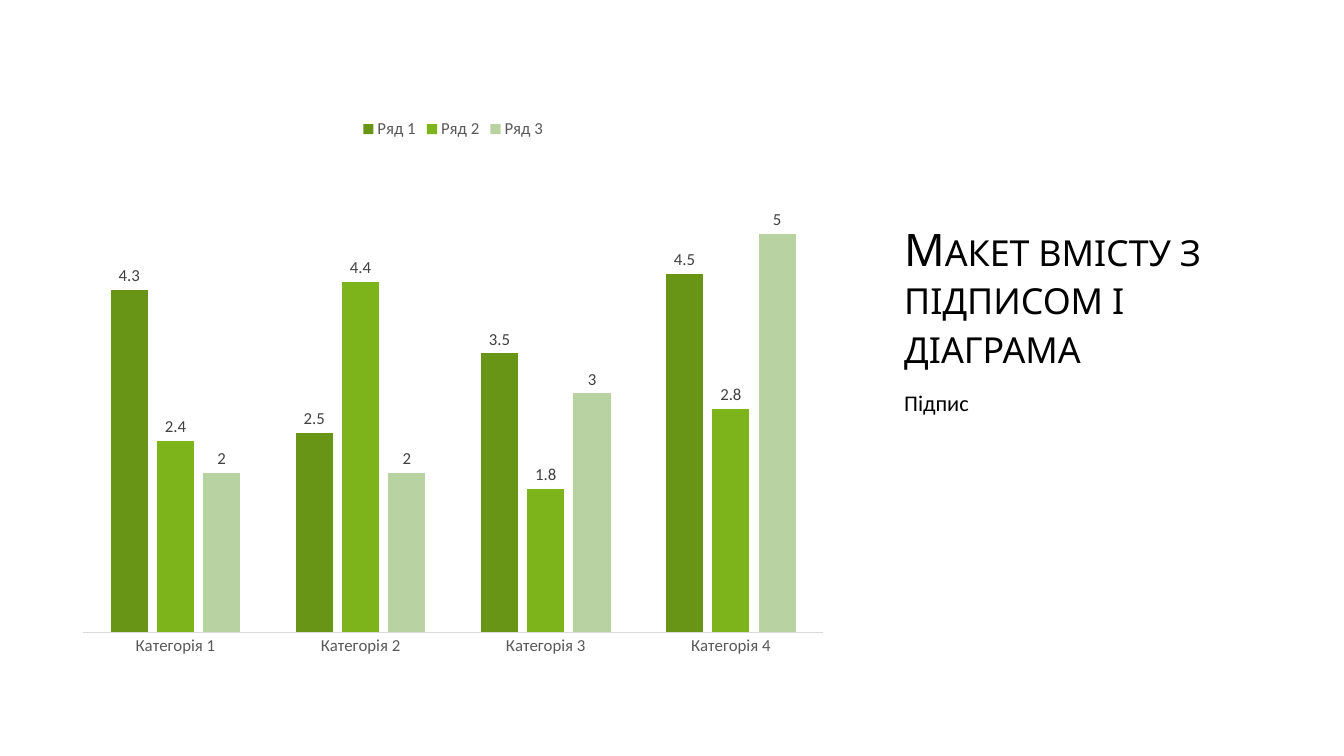
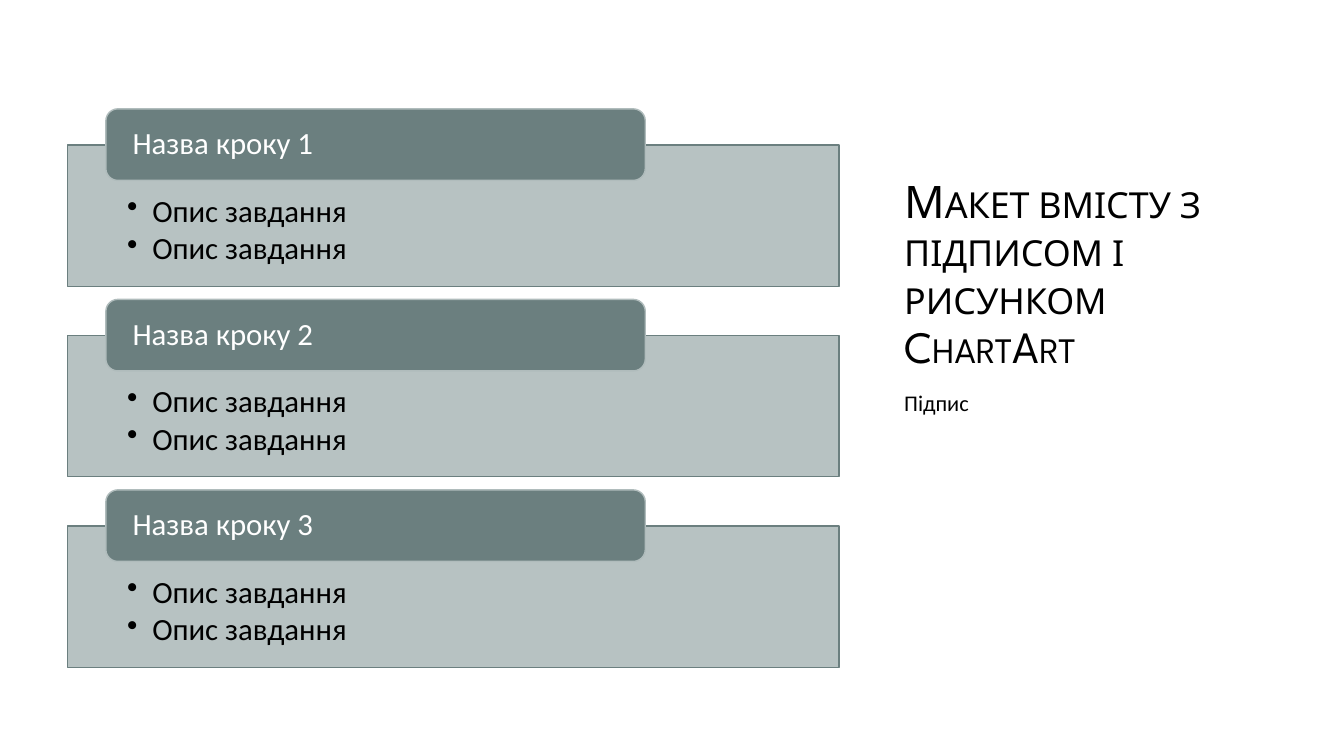
from dataclasses import dataclass

from pptx import Presentation
from pptx.chart.data import CategoryChartData
from pptx.dml.color import RGBColor
from pptx.enum.chart import XL_CHART_TYPE, XL_LABEL_POSITION, XL_LEGEND_POSITION, XL_TICK_MARK
from pptx.enum.shapes import MSO_SHAPE
from pptx.enum.text import MSO_ANCHOR, PP_ALIGN
from pptx.oxml.ns import qn
from pptx.util import Inches, Pt
from lxml import etree

CLUSTERED = XL_CHART_TYPE.COLUMN_CLUSTERED
OUTSIDE_END = XL_LABEL_POSITION.OUTSIDE_END
LEGEND_TOP = XL_LEGEND_POSITION.TOP
NO_TICK = XL_TICK_MARK.NONE
RECTANGLE = MSO_SHAPE.RECTANGLE
ROUNDED = MSO_SHAPE.ROUNDED_RECTANGLE
TOP, MIDDLE, BOTTOM = MSO_ANCHOR.TOP, MSO_ANCHOR.MIDDLE, MSO_ANCHOR.BOTTOM
LEFT = PP_ALIGN.LEFT

BLACK = RGBColor(0x00, 0x00, 0x00)
WHITE = RGBColor(0xFF, 0xFF, 0xFF)
SLATE = RGBColor(0x6B, 0x7F, 0x7F)
MIST = RGBColor(0xB0, 0xBC, 0xBC)
AXIS_TEXT = RGBColor(0x59, 0x59, 0x59)
LABEL_TEXT = RGBColor(0x40, 0x40, 0x40)
AXIS_LINE = RGBColor(0xD9, 0xD9, 0xD9)
DARK_GREEN = RGBColor(0x68, 0x95, 0x16)
GREEN = RGBColor(0x7D, 0xB4, 0x1B)
PALE_GREEN = RGBColor(0xB9, 0xD2, 0xA2)

LINE_SPACING = 0.9
CONTENT_LEFT, CONTENT_WIDTH = 0.67, 7.65
CAPTION_LEFT, CAPTION_WIDTH = 8.87, 3.8
STEP_TOP, STEP_PITCH = 1.08, 1.89
PANEL_DROP = 0.36


@dataclass(frozen=True)
class TextStyle:
    size: int
    color: RGBColor
    font: str = "Calibri"
    small_caps: bool = False
    bullet: bool = False
    space_after: int = 0


@dataclass(frozen=True)
class Series:
    name: str
    values: tuple[float, ...]
    color: RGBColor


@dataclass(frozen=True)
class Step:
    title: str
    tasks: tuple[str, ...]


TITLE = TextStyle(32, BLACK, "League Spartan", small_caps=True)
CAPTION = TextStyle(16, BLACK)
STEP_TITLE = TextStyle(22, WHITE)
TASK = TextStyle(22, BLACK, bullet=True, space_after=3)
AXIS = TextStyle(12, AXIS_TEXT)
DATA_LABEL = TextStyle(12, LABEL_TEXT)

CATEGORIES = tuple(f"Категорія {number}" for number in range(1, 5))
SERIES = (
    Series("Ряд 1", (4.3, 2.5, 3.5, 4.5), DARK_GREEN),
    Series("Ряд 2", (2.4, 4.4, 1.8, 2.8), GREEN),
    Series("Ряд 3", (2, 2, 3, 5), PALE_GREEN),
)
STEPS = tuple(Step(f"Назва кроку {number}", ("Опис завдання",) * 2) for number in range(1, 4))


def inches(*lengths: float) -> list:
    return [Inches(length) for length in lengths]


def style_font(font, style: TextStyle) -> None:
    for name, value in {"name": style.font, "size": Pt(style.size), "bold": False}.items():
        setattr(font, name, value)
    font.color.rgb = style.color


def add_bullet(para) -> None:
    properties = para._p.get_or_add_pPr()
    properties.set("marL", str(Inches(0.25)))
    properties.set("indent", str(Inches(-0.25)))
    etree.SubElement(properties, qn("a:buChar")).set("char", "•")


def write_text(box, lines: tuple[str, ...], style: TextStyle, anchor=TOP,
               insets: tuple[float, ...] = (0.1, 0.05, 0.1, 0.05)) -> None:
    """Fill a box with one paragraph a line; insets run left, top, right, bottom."""
    frame = box.text_frame
    left, top, right, bottom = inches(*insets)
    frame_format = {"word_wrap": True, "vertical_anchor": anchor, "margin_left": left,
                    "margin_top": top, "margin_right": right, "margin_bottom": bottom}
    for name, value in frame_format.items():
        setattr(frame, name, value)
    para_format = {"alignment": LEFT, "line_spacing": LINE_SPACING,
                   "space_after": Pt(style.space_after)}
    for index, line in enumerate(lines):
        para = frame.add_paragraph() if index else frame.paragraphs[0]
        for name, value in para_format.items():
            setattr(para, name, value)
        if style.bullet:
            add_bullet(para)
        span = para.add_run()
        span.text = line
        style_font(span.font, style)
        if style.small_caps:
            span.font._element.set("cap", "small")


def add_caption_page(deck, title: str, caption: str):
    """Add a page with its title and caption in the right-hand column."""
    page = deck.slides.add_slide(deck.slide_layouts[6])
    title_box = page.shapes.add_textbox(*inches(CAPTION_LEFT, 1.25, CAPTION_WIDTH, 2.5))
    write_text(title_box, (title,), TITLE, BOTTOM)
    caption_box = page.shapes.add_textbox(*inches(CAPTION_LEFT, 3.84, CAPTION_WIDTH, 2.3))
    write_text(caption_box, (caption,), CAPTION)
    return page


def add_column_chart(page) -> None:
    data = CategoryChartData()
    data.categories = CATEGORIES
    for series in SERIES:
        data.add_series(series.name, series.values)
    area = inches(CONTENT_LEFT, 1.07, CONTENT_WIDTH, 5.55)
    chart = page.shapes.add_chart(CLUSTERED, *area, data).chart
    chart.has_title = False
    style_font(chart.font, AXIS)

    chart.has_legend = True
    chart.legend.position = LEGEND_TOP
    chart.legend.include_in_layout = False
    style_font(chart.legend.font, AXIS)

    category_axis = chart.category_axis
    category_axis.major_tick_mark = NO_TICK
    category_axis.format.line.color.rgb = AXIS_LINE
    category_axis.format.line.width = Pt(0.75)
    style_font(category_axis.tick_labels.font, AXIS)
    value_format = {"visible": False, "has_major_gridlines": False,
                    "minimum_scale": 0, "maximum_scale": 6}
    for name, value in value_format.items():
        setattr(chart.value_axis, name, value)

    plot = chart.plots[0]
    for name, value in {"gap_width": 150, "overlap": -25, "vary_by_categories": False}.items():
        setattr(plot, name, value)
    for column, series in zip(plot.series, SERIES):
        column.format.fill.solid()
        column.format.fill.fore_color.rgb = series.color
        column.data_labels.show_value = True
        column.data_labels.position = OUTSIDE_END
        style_font(column.data_labels.font, DATA_LABEL)


def add_block(page, kind, area: tuple[float, ...], fill: RGBColor, line: RGBColor,
              opacity: int = 100):
    block = page.shapes.add_shape(kind, *inches(*area))
    block.shadow.inherit = False
    block.fill.solid()
    block.fill.fore_color.rgb = fill
    block.line.color.rgb = line
    block.line.width = Pt(1)
    if opacity < 100:
        color = block._element.spPr.find(qn("a:solidFill"))[0]
        etree.SubElement(color, qn("a:alpha")).set("val", str(opacity * 1000))
    return block


def add_step(page, step: Step, top: float) -> None:
    """Draw a task panel with its title tab over the upper edge."""
    panel_area = (CONTENT_LEFT, top + PANEL_DROP, CONTENT_WIDTH, 1.4)
    panel = add_block(page, RECTANGLE, panel_area, MIST, SLATE, opacity=90)
    write_text(panel, step.tasks, TASK, insets=(0.59, 0.5, 0.59, 0.17))
    tab = add_block(page, ROUNDED, (1.05, top, 5.35, 0.71), SLATE, MIST)
    write_text(tab, (step.title,), STEP_TITLE, MIDDLE, (0.23, 0, 0.23, 0))


def main() -> None:
    deck = Presentation()
    deck.slide_width, deck.slide_height = inches(13.33, 7.5)

    chart_page = add_caption_page(deck, "Макет вмісту з підписом і діаграма", "Підпис")
    add_column_chart(chart_page)

    steps_page = add_caption_page(
        deck, "Макет вмісту з підписом і рисунком ChartArt", "Підпис")
    for index, step in enumerate(STEPS):
        add_step(steps_page, step, STEP_TOP + index * STEP_PITCH)

    deck.save("out.pptx")


if __name__ == "__main__":
    main()
